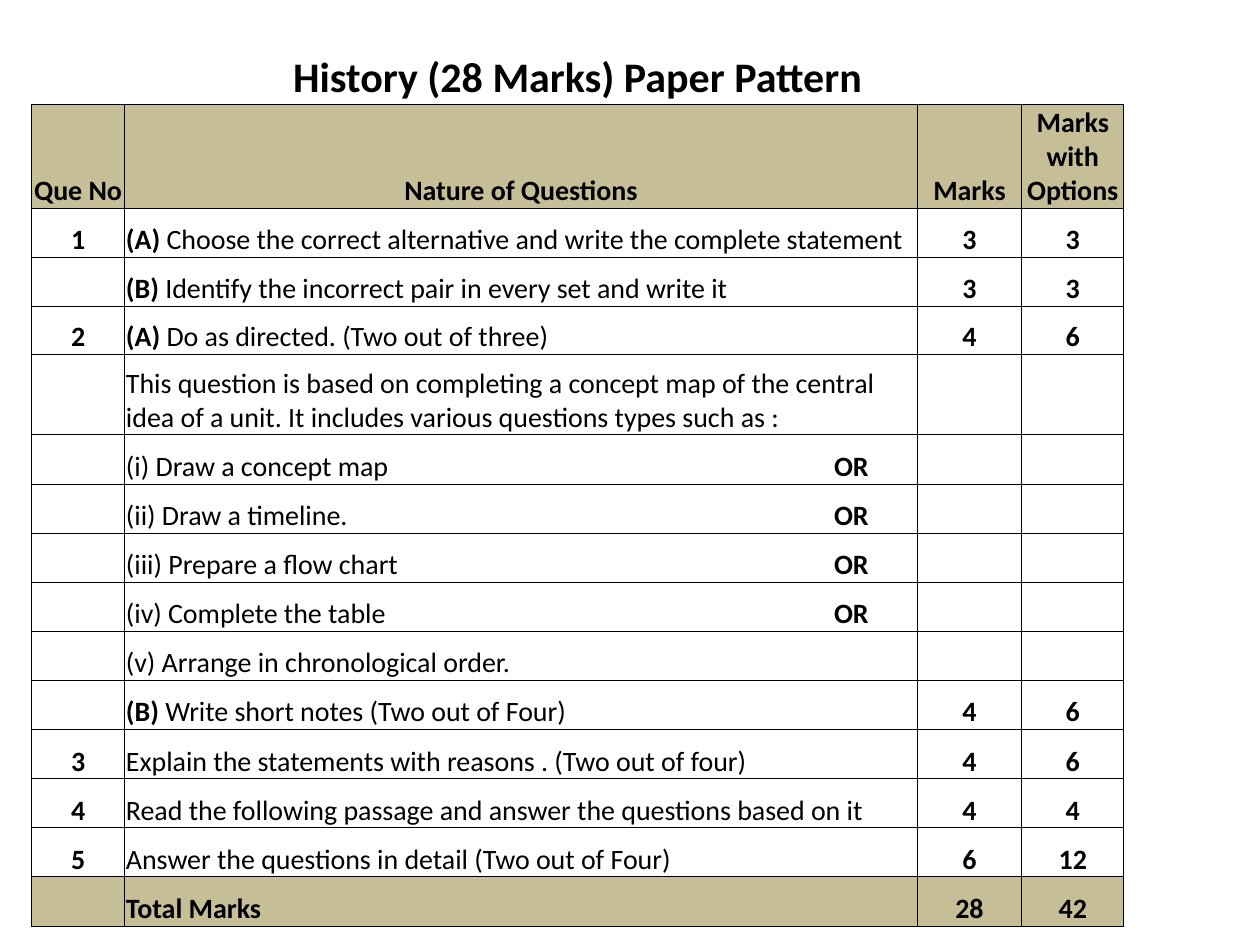
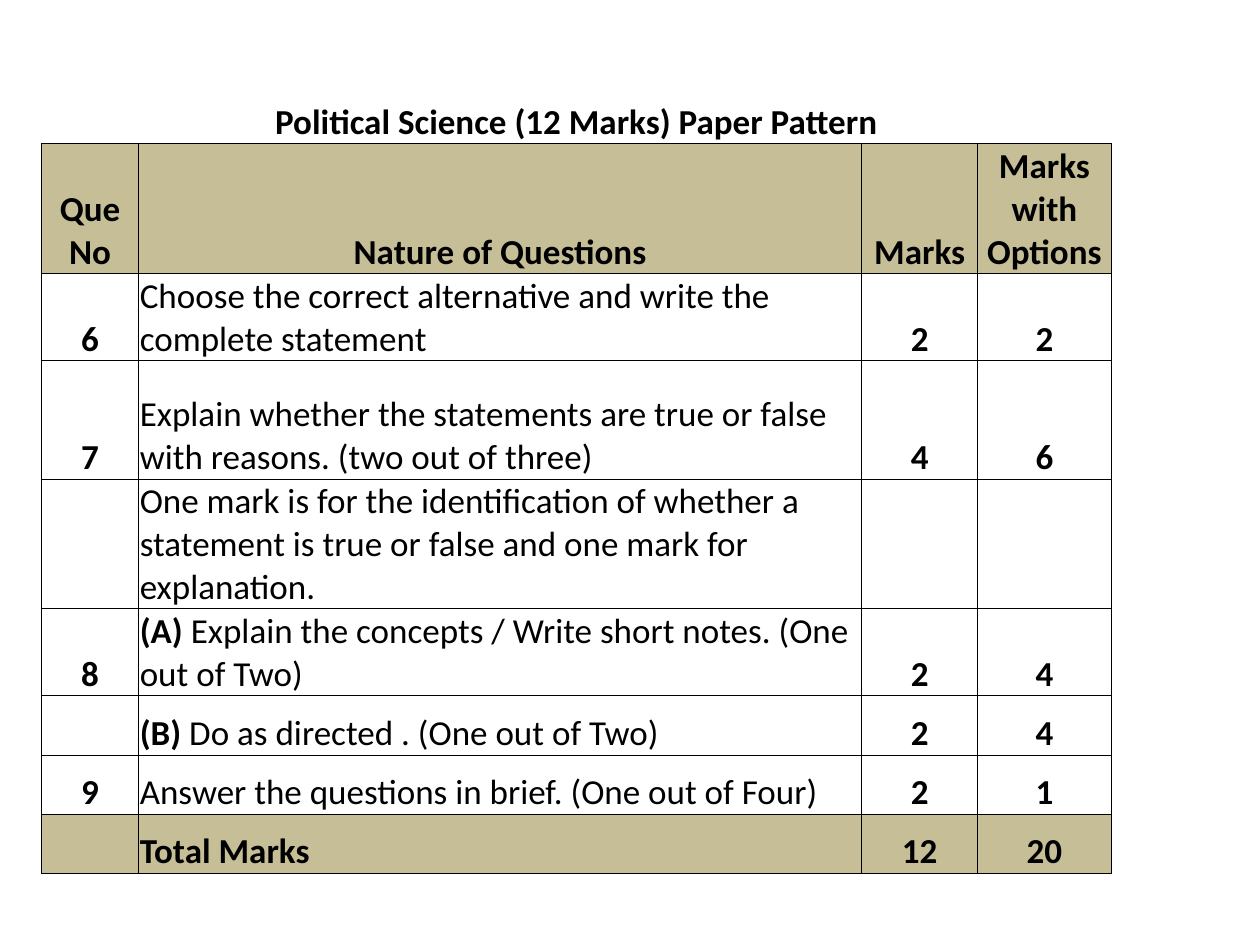
from dataclasses import dataclass

from lxml import etree
from pptx import Presentation
from pptx.dml.color import RGBColor
from pptx.enum.text import MSO_ANCHOR, PP_ALIGN
from pptx.oxml.ns import qn
from pptx.slide import Slide
from pptx.table import _Cell
from pptx.util import Inches, Pt

CENTER, LEFT = PP_ALIGN.CENTER, PP_ALIGN.LEFT
BOTTOM = MSO_ANCHOR.BOTTOM

FONT = "Calibri"
BLACK = "000000"
BAND = "C5BE97"
BORDER_WIDTH = Pt(0.5)
OR_POSITION = Inches(5.62)
HEADINGS = ("Que No", "Nature of Questions", "Marks", "Marks with Options")


@dataclass(frozen=True)
class Question:
    number: str = ""
    label: str = ""
    nature: str = ""
    marks: str = ""
    with_options: str = ""
    joined_by_or: bool = False
    height: float = 0.0


@dataclass(frozen=True)
class PaperPattern:
    title: str
    title_size: int
    body_size: int
    left: float
    top: float
    column_widths: tuple[float, ...]
    title_height: float
    heading_height: float
    row_height: float
    questions: tuple[Question, ...]
    total: tuple[str, str]


HISTORY = PaperPattern(
    title="History (28 Marks) Paper Pattern",
    title_size=24,
    body_size=16,
    left=0.25,
    top=0.41,
    column_widths=(0.74, 6.29, 0.83, 0.81),
    title_height=0.4,
    heading_height=0.76,
    row_height=0.39,
    questions=(
        Question("1", "(A)", " Choose the correct alternative and write the complete statement", "3", "3"),
        Question("", "(B)", " Identify the incorrect pair in every set and write it", "3", "3"),
        Question("2", "(A)", " Do as directed. (Two out of three)", "4", "6", height=0.38),
        Question(
            nature="This question is based on completing a concept map of the central idea "
            "of a unit. It includes various questions types such as :",
            height=0.64,
        ),
        Question(nature="(i) Draw a concept map", joined_by_or=True),
        Question(nature="(ii) Draw a timeline.", joined_by_or=True),
        Question(nature="(iii) Prepare a flow chart", joined_by_or=True),
        Question(nature="(iv) Complete the table", joined_by_or=True),
        Question(nature="(v) Arrange in chronological order."),
        Question("", "(B)", " Write short notes (Two out of Four)", "4", "6"),
        Question("3", "", "Explain the statements with reasons . (Two out of four)", "4", "6"),
        Question("4", "", "Read the following passage and answer the questions based on it", "4", "4"),
        Question("5", "", "Answer the questions in detail (Two out of Four)", "6", "12"),
    ),
    total=("28", "42"),
)

POLITICAL_SCIENCE = PaperPattern(
    title="Political Science (12 Marks) Paper Pattern",
    title_size=20,
    body_size=20,
    left=0.33,
    top=0.58,
    column_widths=(0.77, 5.74, 0.92, 1.06),
    title_height=0.56,
    heading_height=0.94,
    row_height=0.47,
    questions=(
        Question("6", "", "Choose the correct alternative and write the complete statement", "2", "2"),
        Question(
            "7", "", "Explain whether the statements are true or false with reasons. (two out of three)",
            "4", "6", height=0.94,
        ),
        Question(
            nature="One mark is for the identification of whether a statement is true or false "
            "and one mark for explanation.",
            height=0.94,
        ),
        Question("8", "(A) ", "Explain the concepts / Write short notes. (One out of Two)", "2", "4"),
        Question("", "(B) ", "Do as directed . (One out of Two)", "2", "4"),
        Question("9", "", "Answer the questions in brief. (One out of Four)", "2", "1"),
    ),
    total=("12", "20"),
)


def color(value: str) -> RGBColor:
    return RGBColor.from_string(value)


def set_borders(cell: _Cell, visible_sides: str) -> None:
    properties = cell._tc.get_or_add_tcPr()
    for side in "LRTB":
        line = etree.SubElement(properties, qn(f"a:ln{side}"), w=str(BORDER_WIDTH))
        if side in visible_sides:
            fill = etree.SubElement(line, qn("a:solidFill"))
            etree.SubElement(fill, qn("a:srgbClr"), val=BLACK)
        else:
            etree.SubElement(line, qn("a:noFill"))


def prepare_cell(cell: _Cell, visible_sides: str, band: bool) -> None:
    set_borders(cell, visible_sides)
    cell.margin_left = cell.margin_right = cell.margin_top = Inches(0.01)
    cell.margin_bottom = Inches(0)
    cell.vertical_anchor = BOTTOM
    if band:
        cell.fill.solid()
        cell.fill.fore_color.rgb = color(BAND)
    else:
        cell.fill.background()


def write_cell(cell: _Cell, parts: list[tuple[str, bool]], size: int, alignment: PP_ALIGN) -> None:
    paragraph = cell.text_frame.paragraphs[0]
    paragraph.alignment = alignment
    for text, bold in parts:
        if text:
            run = paragraph.add_run()
            run.text = text
            run.font.name = FONT
            run.font.size = Pt(size)
            run.font.bold = bold
            run.font.color.rgb = color(BLACK)


def add_or_tab(cell: _Cell) -> None:
    properties = cell.text_frame.paragraphs[0]._p.get_or_add_pPr()
    tabs = etree.SubElement(properties, qn("a:tabLst"))
    etree.SubElement(tabs, qn("a:tab"), pos=str(OR_POSITION), algn="l")


def draw_pattern(slide: Slide, pattern: PaperPattern) -> None:
    heights = [
        pattern.title_height,
        pattern.heading_height,
        *(question.height or pattern.row_height for question in pattern.questions),
        pattern.row_height,
    ]
    widths = pattern.column_widths
    table = slide.shapes.add_table(
        len(heights), len(widths), Inches(pattern.left), Inches(pattern.top),
        Inches(sum(widths)), Inches(sum(heights)),
    ).table
    table.first_row = table.horz_banding = False
    for column, width in zip(table.columns, widths):
        column.width = Inches(width)

    total_row = len(heights) - 1
    for row, height in enumerate(heights):
        table.rows[row].height = Inches(height)
        for cell in table.rows[row].cells:
            prepare_cell(cell, "LRTB" if row else "B", row in (1, total_row))

    size = pattern.body_size
    title_cell = table.cell(0, 0)
    title_cell.merge(table.cell(0, len(widths) - 1))
    write_cell(title_cell, [(pattern.title, True)], pattern.title_size, CENTER)
    for column, heading in enumerate(HEADINGS):
        write_cell(table.cell(1, column), [(heading, True)], size, CENTER)

    for row, question in enumerate(pattern.questions, start=2):
        nature_cell = table.cell(row, 1)
        nature = [(question.label, True), (question.nature, False)]
        if question.joined_by_or:
            add_or_tab(nature_cell)
            nature.append(("\tOR", True))
        write_cell(nature_cell, nature, size, LEFT)
        for column, value in ((0, question.number), (2, question.marks), (3, question.with_options)):
            write_cell(table.cell(row, column), [(value, True)], size, CENTER)

    write_cell(table.cell(total_row, 1), [("Total Marks", True)], size, LEFT)
    for column, total in enumerate(pattern.total, start=2):
        write_cell(table.cell(total_row, column), [(total, True)], size, CENTER)


def main() -> None:
    presentation = Presentation()
    presentation.slide_width = Inches(10)
    presentation.slide_height = Inches(7.5)
    blank_layout = presentation.slide_layouts[6]
    for pattern in (HISTORY, POLITICAL_SCIENCE):
        draw_pattern(presentation.slides.add_slide(blank_layout), pattern)
    presentation.save("out.pptx")


if __name__ == "__main__":
    main()
